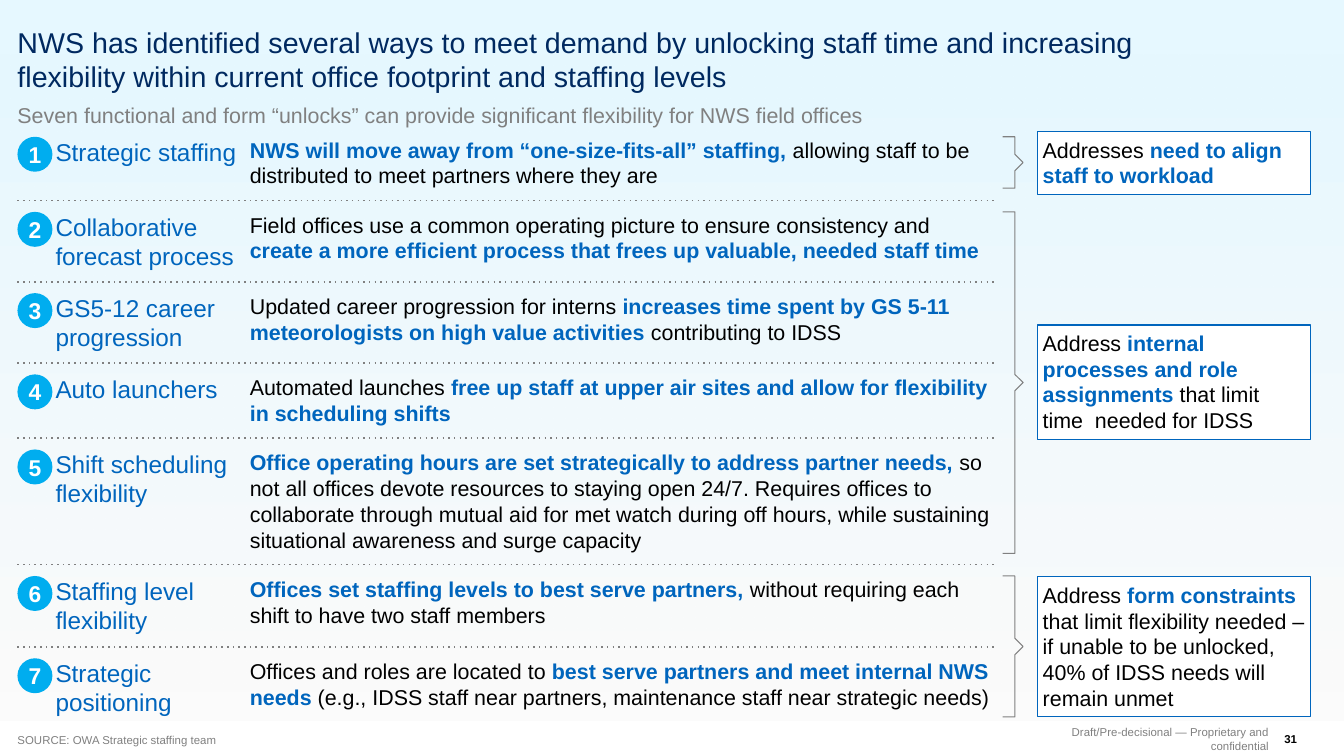
import pptx
import pptx.util
import pptx.dml.color
import pptx.enum.dml
import pptx.enum.shapes
import pptx.enum.text
import pptx.oxml
import pptx.oxml.ns

Inches = pptx.util.Inches
Pt = pptx.util.Pt
Shape = pptx.enum.shapes.MSO_SHAPE
Anchor = pptx.enum.text.MSO_ANCHOR
Align = pptx.enum.text.PP_ALIGN
qn = pptx.oxml.ns.qn

FONT = "Arial"
BLACK, WHITE, GREY = "000000", "FFFFFF", "808080"
NAVY, BLUE, CYAN = "002960", "0065BD", "00ADEF"
PALE, SKY = "FBFBFB", "E6F8FF"
LEFT = 0.17

ROWS = [
    (1.33, 0.29, 0.5, "Strategic staffing",
     "*NWS will move away from “one-size-fits-all” staffing, *allowing staff to be "
     "distributed to meet partners where they are"),
    (2.06, 0.57, 0.5, "Collaborative forecast process",
     "Field offices use a common operating picture to ensure consistency and "
     "*create a more efficient process that frees up valuable, needed staff time*"),
    (2.85, 0.57, 0.5, "GS5-12 career progression",
     "Updated career progression for interns *increases time spent by GS 5-11 "
     "meteorologists on high value activities *contributing to IDSS"),
    (3.64, 0.29, 0.5, "Auto launchers",
     "Automated launches *free up staff at upper air sites and allow for flexibility "
     "in scheduling shifts*"),
    (4.37, 0.57, 1.01, "Shift scheduling flexibility",
     "*Office operating hours are set strategically to address partner needs, *so "
     "not all offices devote resources to staying open 24/7. Requires offices to "
     "collaborate through mutual aid for met watch during off hours, while sustaining "
     "situational awareness and surge capacity"),
    (5.6, 0.57, 0.5, "Staffing level flexibility",
     "*Offices set staffing levels to best serve partners, *without requiring each "
     "shift to have two staff members"),
    (6.4, 0.57, 0.5, "Strategic positioning",
     "Offices and roles are located to *best serve partners and meet internal NWS "
     "needs *(e.g., IDSS staff near partners, maintenance staff near strategic needs)"),
]

GROUPS = [
    (1.33, 1.83, 1.28, 0.61, "Addresses *need to align staff to workload*"),
    (2.06, 5.38, 3.16, 1.11,
     "Address *internal processes and role assignments *that limit time  needed for IDSS"),
    (5.6, 6.97, 5.61, 1.36,
     "Address *form constraints *that limit flexibility needed – if unable to be "
     "unlocked, 40% of IDSS needs will remain unmet"),
]


def color(code):
    return pptx.dml.color.RGBColor.from_string(code)


class Deck:
    def __init__(self, slide):
        self.slide = slide
        self.shapes = slide.shapes

    def label(self, shape, text, size, ink=BLACK, bold=False, align=Align.LEFT,
              anchor=Anchor.TOP, pad=0):
        frame = shape.text_frame
        frame.word_wrap = True
        frame.auto_size = pptx.enum.text.MSO_AUTO_SIZE.NONE
        frame.vertical_anchor = anchor
        frame.margin_left = frame.margin_right = Inches(pad)
        frame.margin_top = frame.margin_bottom = Inches(pad)
        para = frame.paragraphs[0]
        para.alignment = align
        parts = text.split("*")
        for index, part in enumerate(parts):
            if part:
                run = para.add_run()
                run.text = part
                if len(parts) > 1:
                    strong = index % 2 == 1
                    run.font.bold = strong
                    run.font.color.rgb = color(BLUE if strong else ink)
        para.font.name = FONT
        para.font.size = Pt(size)
        if len(parts) == 1:
            para.font.bold = bold
            para.font.color.rgb = color(ink)
        return para

    def text(self, box, *args, **style):
        shape = self.shapes.add_textbox(*map(Inches, box))
        self.label(shape, *args, **style)

    def holder(self, index, box, *args, **style):
        shape = self.slide.placeholders[index]
        shape.left, shape.top, shape.width, shape.height = map(Inches, box)
        props = shape.text_frame.paragraphs[0]._p.get_or_add_pPr()
        props.set("marL", "0")
        props.set("indent", "0")
        props.append(pptx.oxml.parse_xml(
            '<a:buNone xmlns:a="http://schemas.openxmlformats.org/drawingml/2006/main"/>'))
        self.label(shape, *args, **style).space_before = Pt(0)

    def shape(self, kind, box, fill, line=None):
        shape = self.shapes.add_shape(kind, *map(Inches, box))
        shape.shadow.inherit = False
        shape.fill.solid()
        shape.fill.fore_color.rgb = color(fill)
        if line:
            shape.line.color.rgb = color(line)
            shape.line.width = Pt(0.75)
        else:
            shape.line.fill.background()
        return shape

    def fade(self, box, clear=False):
        shape = self.shape(Shape.RECTANGLE, box, PALE)
        shape.fill.gradient()
        shape.fill.gradient_angle = 90
        for stop, code in zip(shape.fill.gradient_stops, (PALE, SKY)):
            stop.color.rgb = color(code)
        if clear:
            tone = next(shape.element.iter(qn("a:srgbClr")))
            tone.append(tone.makeelement(qn("a:alpha"), {"val": "0"}))

    def rule(self, top, left, right):
        line = self.shapes.add_connector(
            pptx.enum.shapes.MSO_CONNECTOR.STRAIGHT,
            *map(Inches, (left, top, right, top)))
        line.line.color.rgb = color(GREY)
        line.line.width = Pt(1)
        line.line.dash_style = pptx.enum.dml.MSO_LINE.ROUND_DOT
        next(line.element.iter(qn("a:prstDash"))).set("val", "dot")
        props = line.element.spPr
        props.append(props.makeelement(qn("a:effectLst"), {}))

    def brace(self, top, end):
        mid = (top + end) / 2
        near, bend, tip = 9.75, 9.87, 9.95
        points = [(bend, top), (bend, mid - 0.08), (tip, mid),
                  (bend, mid + 0.08), (bend, end), (near, end)]
        form = self.shapes.build_freeform(Inches(near), Inches(top))
        form.add_line_segments([(Inches(x), Inches(y)) for x, y in points], close=False)
        shape = form.convert_to_shape()
        shape.shadow.inherit = False
        shape.fill.background()
        shape.line.color.rgb = color(GREY)
        shape.line.width = Pt(0.75)


def main():
    show = pptx.Presentation()
    show.slide_width, show.slide_height = Inches(13.07), Inches(7.35)
    deck = Deck(show.slides.add_slide(show.slide_layouts[1]))

    deck.fade((0, 0, 13.07, 7.01))
    deck.fade((0, 0.53, 13.07, 6.22), clear=True)
    for item in list(deck.slide.placeholders):
        item.element.getparent().append(item.element)

    deck.holder(0, (LEFT, 0.24, 11.81, 0.67),
                "NWS has identified several ways to meet demand by unlocking staff time and "
                "increasing flexibility within current office footprint and staffing levels",
                20, NAVY)
    deck.holder(1, (LEFT, 0.99, 12.57, 0.25),
                "Seven functional and form “unlocks” can provide significant flexibility "
                "for NWS field offices", 15, GREY, anchor=Anchor.BOTTOM)

    for number, (top, tall, deep, name, detail) in enumerate(ROWS, 1):
        dot = deck.shape(Shape.OVAL, (LEFT, top, 0.34, 0.34), CYAN)
        deck.label(dot, str(number), 16, WHITE, True, Align.CENTER, Anchor.MIDDLE)
        deck.text((0.54, top, 1.77, tall), name, 17, BLUE)
        deck.text((2.43, top, 7.26, deep), detail, 15)
        if number > 1:
            deck.rule(top - 0.11, LEFT, 9.69)

    for top, end, start, height, note in GROUPS:
        deck.brace(top, end)
        card = deck.shape(Shape.RECTANGLE, (10.09, start, 2.65, height), WHITE, BLUE)
        deck.label(card, note, 15, pad=0.05)

    deck.text((LEFT, 7.12, 9.5, 0.14), "SOURCE: OWA Strategic staffing team", 8, GREY,
              anchor=Anchor.BOTTOM)
    deck.text((9.83, 7.12, 2.51, 0.13), "Draft/Pre-decisional — Proprietary and confidential",
              8, GREY, align=Align.RIGHT, anchor=Anchor.MIDDLE)
    deck.text((12.49, 7.12, 0.14, 0.13), "31", 8, bold=True, anchor=Anchor.MIDDLE)

    show.save("out.pptx")


if __name__ == "__main__":
    main()
